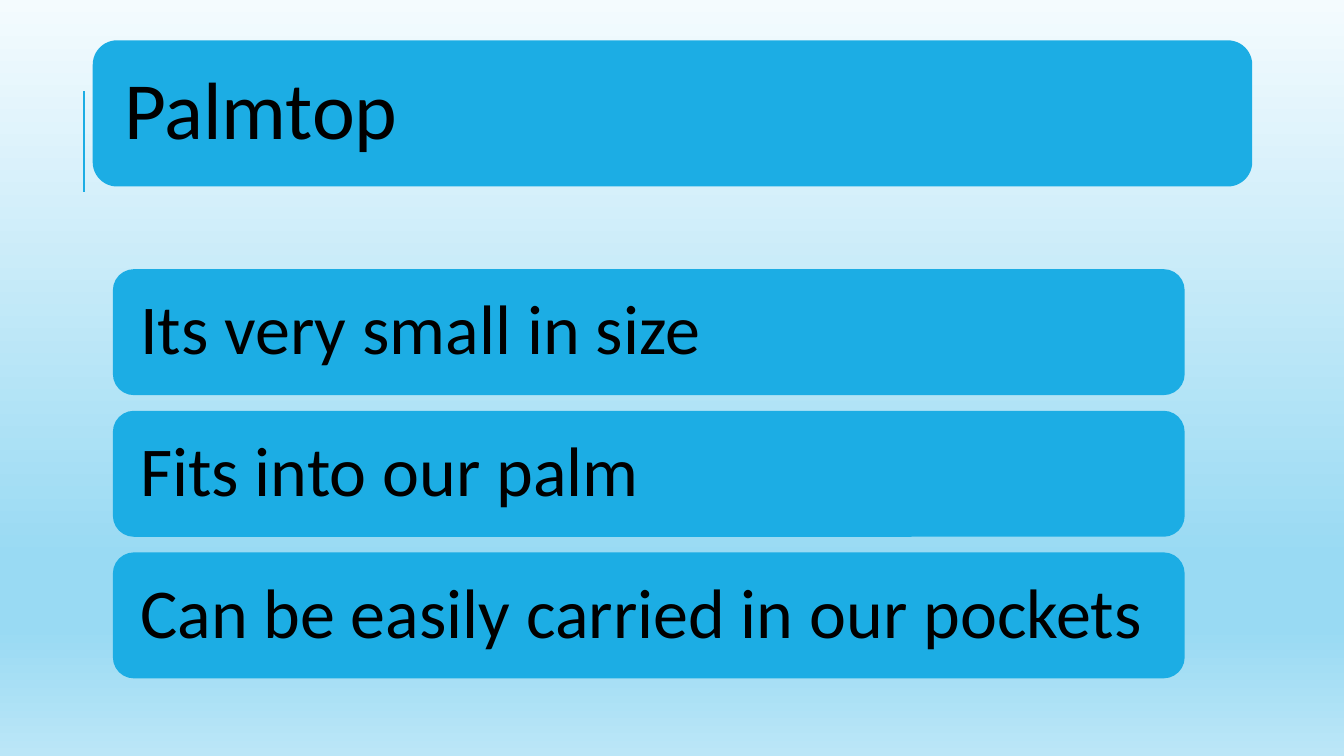
from dataclasses import dataclass

from lxml import etree
from pptx import Presentation
from pptx import util as u
from pptx.dml import color
from pptx.enum import shapes, text
from pptx.oxml import ns
from pptx.shapes.autoshape import Shape
from pptx.shapes.connector import Connector
from pptx.slide import Slide

COLORS = {"accent": "1CADE4", "ink": "000000"}
BACKDROP = {0: "F4FBFE", 74: "99DAF3", 83: "99DAF3", 100: "BBE6F7"}
FEATURES = ["Its very small in size", "Fits into our palm", "Can be easily carried in our pockets"]
FIRST_TOP, PITCH = 2.67, 1.405


@dataclass
class Panel:
    wording: str
    left: float
    top: float
    width: float
    height: float
    inset: float
    size: int


def rgb(name: str) -> color.RGBColor:
    return color.RGBColor.from_string(COLORS[name])


def apply(target: object, values: dict[str, object]) -> None:
    for name, value in values.items():
        setattr(target, name, value)


def paint_background(page: Slide) -> None:
    fill = page.background.fill
    fill.gradient()
    fill.gradient_angle = 270
    stops = page.element.find(".//" + ns.qn("a:gsLst"))
    for stop in list(stops):
        stops.remove(stop)
    for percent, shade in BACKDROP.items():
        stop = etree.SubElement(stops, ns.qn("a:gs"), pos=str(percent * 1000))
        etree.SubElement(stop, ns.qn("a:srgbClr"), val=shade)


def add_accent_line(page: Slide) -> Connector:
    line = page.shapes.add_connector(
        shapes.MSO_CONNECTOR.STRAIGHT, u.Inches(0.83), u.Inches(1.9), u.Inches(0.83), u.Inches(0.9)
    )
    line.line.color.rgb = rgb("accent")
    line.line.width = u.Pt(1.5)
    etree.SubElement(line.element.spPr, ns.qn("a:effectLst"))
    return line


def add_panel(page: Slide, panel: Panel) -> Shape:
    box = page.shapes.add_shape(
        shapes.MSO_SHAPE.ROUNDED_RECTANGLE,
        *map(u.Inches, (panel.left, panel.top, panel.width, panel.height)),
    )
    box.shadow.inherit = False
    box.fill.solid()
    box.fill.fore_color.rgb = rgb("accent")
    box.line.fill.background()
    frame = box.text_frame
    margins = {f"margin_{side}": u.Inches(panel.inset) for side in ("left", "top", "right", "bottom")}
    apply(frame, margins | {"word_wrap": True, "vertical_anchor": text.MSO_ANCHOR.MIDDLE})
    para = frame.paragraphs[0]
    apply(para, {"alignment": text.PP_ALIGN.LEFT, "line_spacing": 0.9})
    span = para.add_run()
    span.text = panel.wording
    apply(span.font, {"name": "Calibri", "size": u.Pt(panel.size)})
    span.font.color.rgb = rgb("ink")
    return box


def main() -> None:
    deck = Presentation()
    apply(deck, {"slide_width": u.Inches(13.33), "slide_height": u.Inches(7.5)})
    page = deck.slides.add_slide(deck.slide_layouts[6])
    paint_background(page)
    add_accent_line(page)
    title = Panel("Palmtop", 0.92, 0.4, 11.5, 1.45, 0.24, 58)
    features = [
        Panel(wording, 1.12, FIRST_TOP + row * PITCH, 10.63, 1.25, 0.21, 50)
        for row, wording in enumerate(FEATURES)
    ]
    for panel in [title, *features]:
        add_panel(page, panel)
    deck.save("out.pptx")


if __name__ == "__main__":
    main()
